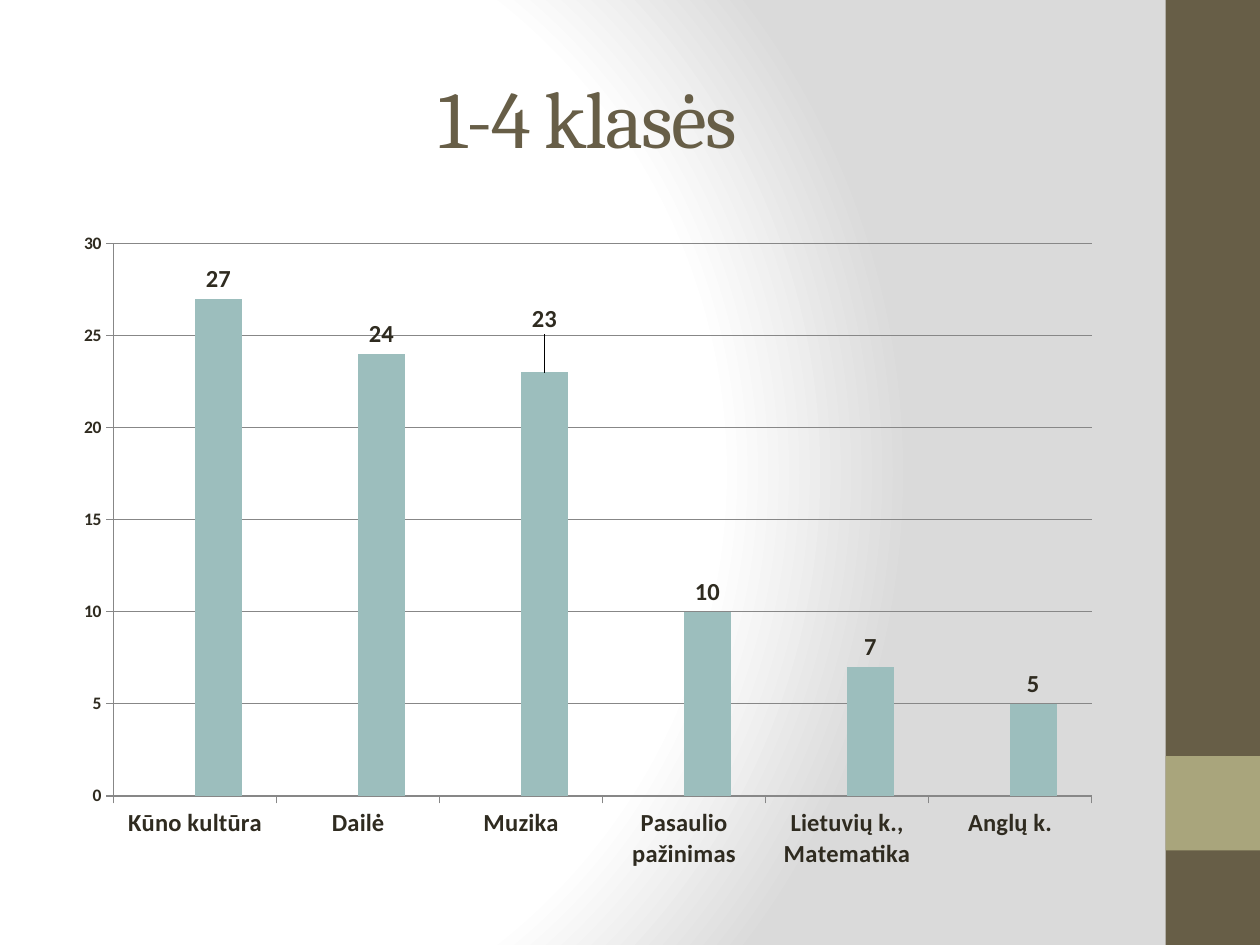
from pptx import Presentation
from pptx.chart.data import CategoryChartData
from pptx.dml.color import RGBColor
from pptx.enum.chart import XL_CHART_TYPE, XL_LABEL_POSITION, XL_TICK_MARK
from pptx.enum.shapes import MSO_SHAPE
from pptx.enum.text import MSO_ANCHOR, PP_ALIGN
from pptx.oxml import parse_xml
from pptx.oxml.ns import nsdecls
from pptx.util import Inches, Pt

OLIVE, KHAKI, TEAL, INK = "675E47", "A9A57C", "9CBEBD", "2F2B20"
BACKDROP_STOPS = [(0, "FFFFFF"), (75, "FFFFFF"), (100, "DADADA")]
SUBJECT_COUNTS = {
    "Kūno kultūra": 27,
    "Dailė": 24,
    "Muzika": 23,
    "Pasaulio pažinimas": 10,
    "Lietuvių k., Matematika": 7,
    "Anglų k.": 5,
}


def rgb(color):
    return RGBColor.from_string(color)


def format_font(font, color=INK, **values):
    for attribute, value in values.items():
        setattr(font, attribute, value)
    font.color.rgb = rgb(color)


def place(shape, box):
    for attribute, length in zip(("left", "top", "width", "height"), box):
        setattr(shape, attribute, Inches(length))


def paint_backdrop(slide):
    """Give the slide a circular gradient, which python-pptx has no method for."""
    slide.background.fill.solid()
    stops = "".join(
        f'<a:gs pos="{percent * 1000}"><a:srgbClr val="{color}"/></a:gs>'
        for percent, color in BACKDROP_STOPS
    )
    gradient = parse_xml(
        f'<a:gradFill {nsdecls("a")} rotWithShape="1"><a:gsLst>{stops}</a:gsLst>'
        '<a:path path="circle">'
        '<a:fillToRect l="20000" t="50000" r="100000" b="50000"/>'
        "</a:path></a:gradFill>"
    )
    solid = slide.background._cSld.xpath("p:bg/p:bgPr/a:solidFill")[0]
    solid.getparent().replace(solid, gradient)


def add_side_band(slide, box):
    left, top, width, height = box
    accent = (left, top + 0.8 * height, width, width)
    for part, color in ((box, OLIVE), (accent, KHAKI)):
        band = slide.shapes.add_shape(
            MSO_SHAPE.RECTANGLE, *(Inches(length) for length in part)
        )
        band.fill.solid()
        band.fill.fore_color.rgb = rgb(color)
        band.line.fill.background()
        band.shadow.inherit = False


def set_title(slide, box, wording):
    title = slide.shapes.title
    place(title, box)
    title.text_frame.vertical_anchor = MSO_ANCHOR.MIDDLE
    paragraph = title.text_frame.paragraphs[0]
    paragraph.alignment = PP_ALIGN.CENTER
    run = paragraph.add_run()
    run.text = wording
    format_font(run.font, OLIVE, name="Cambria", size=Pt(46))
    run._r.get_or_add_rPr().set("spc", "-100")


def raise_label(point, share, **font_values):
    """Lift one value label by a share of the chart height."""
    label = point.data_label
    format_font(label.font, **font_values)
    label.position = XL_LABEL_POSITION.OUTSIDE_END
    layout = parse_xml(
        f'<c:layout {nsdecls("c")}><c:manualLayout>'
        f'<c:x val="0"/><c:y val="{-share}"/></c:manualLayout></c:layout>'
    )
    label._get_or_add_dLbl().insert(1, layout)


def add_subject_chart(slide, box):
    counts = CategoryChartData()
    counts.categories = list(SUBJECT_COUNTS)
    counts.add_series("Series 1", [None] * len(SUBJECT_COUNTS))
    counts.add_series("Series 2", list(SUBJECT_COUNTS.values()))
    chart = slide.shapes.add_chart(
        XL_CHART_TYPE.COLUMN_CLUSTERED,
        *(Inches(length) for length in box),
        counts,
    ).chart
    chart.has_legend = False
    chart.has_title = False
    small = {"name": "Calibri", "size": Pt(10), "bold": True}
    large = {**small, "size": Pt(14)}
    format_font(chart.font, **small)

    plot = chart.plots[0]
    plot.gap_width = 150
    plot.overlap = 0
    plot.vary_by_categories = False
    for series, color in zip(plot.series, (KHAKI, TEAL)):
        series.format.fill.solid()
        series.format.fill.fore_color.rgb = rgb(color)

    subjects = plot.series[1]
    labels = subjects.data_labels
    labels.show_value = True
    labels.position = XL_LABEL_POSITION.OUTSIDE_END
    format_font(labels.font, **large)
    raise_label(subjects.points[2], 0.05, **large)

    for axis in (chart.category_axis, chart.value_axis):
        axis.major_tick_mark = XL_TICK_MARK.OUTSIDE
        axis.minor_tick_mark = XL_TICK_MARK.NONE
    format_font(chart.category_axis.tick_labels.font, **large)
    scale = {
        "minimum_scale": 0,
        "maximum_scale": 30,
        "major_unit": 5,
        "has_major_gridlines": True,
    }
    for attribute, value in scale.items():
        setattr(chart.value_axis, attribute, value)


def main():
    deck = Presentation()
    deck.slide_width, deck.slide_height = Inches(10), Inches(7.5)
    slide = deck.slides.add_slide(deck.slide_layouts[5])
    paint_backdrop(slide)
    add_side_band(slide, (9.25, 0, 0.75, 7.5))
    set_title(slide, (0.5, 0.3, 8.33, 1.25), "1-4 klasės")
    add_subject_chart(slide, (0.5, 1.75, 8.33, 5.25))
    deck.save("out.pptx")


if __name__ == "__main__":
    main()
